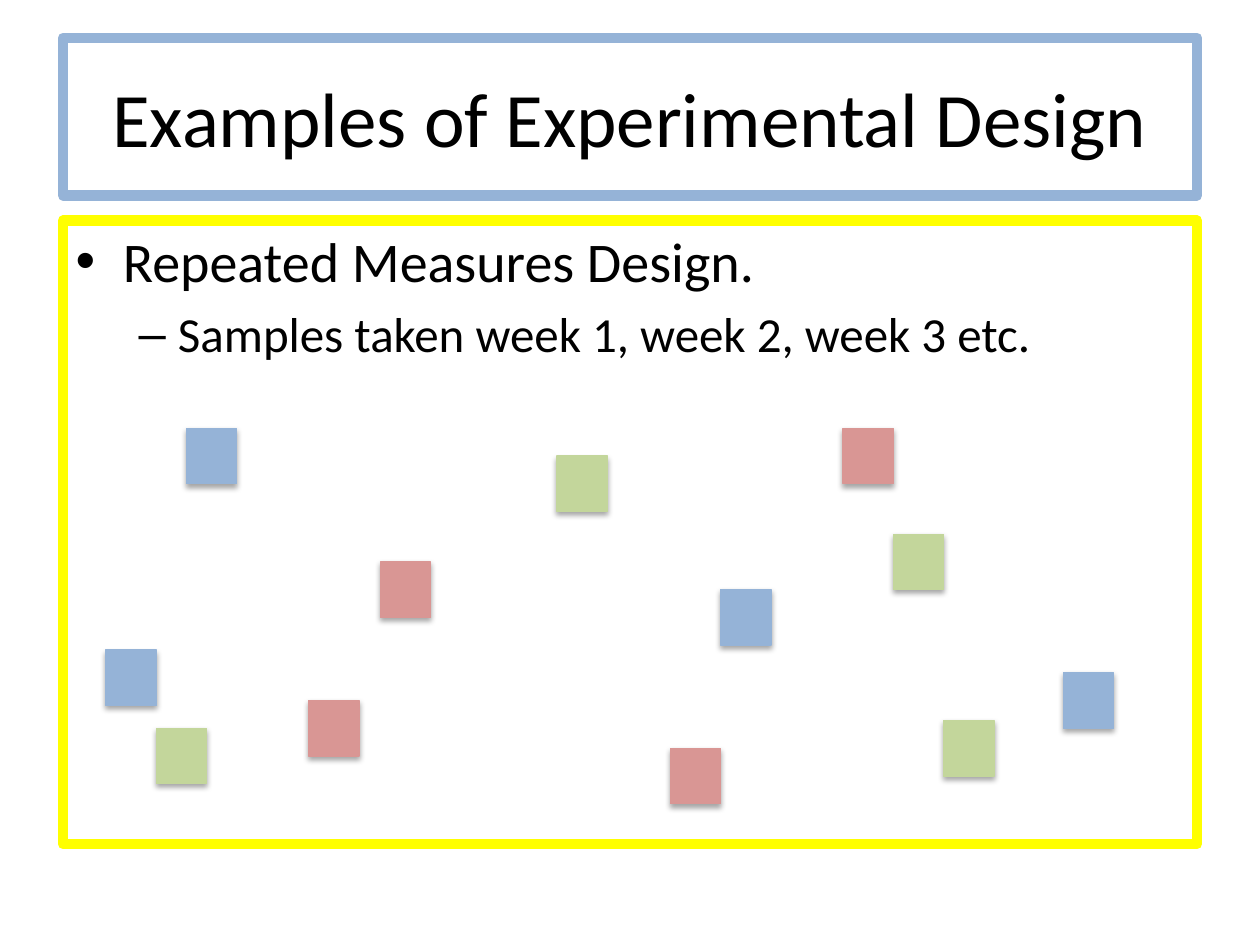
"""Build a slide showing a repeated measures design with scattered samples."""
from pptx import Presentation
from pptx.dml.color import RGBColor
from pptx.enum.shapes import MSO_SHAPE
from pptx.util import Inches, Pt

COLOURS = {
    "black": "000000",
    "yellow": "FFFF00",
    "blue": "95B3D7",
    "green": "C3D69B",
    "red": "D99694",
}
SAMPLES = {
    "blue": [(1.48, 3.4), (0.84, 5.16), (5.72, 4.68), (8.44, 5.34)],
    "green": [(1.24, 5.78), (4.42, 3.62), (7.49, 5.72), (7.09, 4.24)],
    "red": [(2.45, 5.56), (3.02, 4.46), (5.32, 5.94), (6.69, 3.4)],
}


def colour(name):
    return RGBColor.from_string(COLOURS[name])


def fill_placeholder(box, top, height, outline, lines):
    box.left, box.top = Inches(0.5), Inches(top)
    box.width, box.height = Inches(9), Inches(height)
    box.line.color.rgb = colour(outline)
    box.line.width = Pt(6)
    frame = box.text_frame
    frame.text = "\n".join(text for text, size in lines)
    for level, (para, (text, size)) in enumerate(zip(frame.paragraphs, lines)):
        para.level = level
        para.font.name = "Calibri"
        para.font.size = Pt(size)
        para.font.color.rgb = colour("black")


deck = Presentation()
deck.slide_width, deck.slide_height = Inches(10), Inches(7.5)
page = deck.slides.add_slide(deck.slide_layouts[1])

fill_placeholder(page.shapes.title, 0.3, 1.25, "blue",
                 [("Examples of Experimental Design", 44)])
fill_placeholder(page.placeholders[1], 1.75, 4.95, "yellow",
                 [("Repeated Measures Design.", 32),
                  ("Samples taken week 1, week 2, week 3 etc.", 28)])

for week_colour, places in SAMPLES.items():
    for left, top in places:
        sample = page.shapes.add_shape(MSO_SHAPE.RECTANGLE, Inches(left), Inches(top),
                                       Inches(0.4), Inches(0.44))
        sample.fill.solid()
        sample.fill.fore_color.rgb = colour(week_colour)
        sample.line.color.rgb = colour(week_colour)
        sample.line.width = Pt(0.75)

deck.save("out.pptx")
